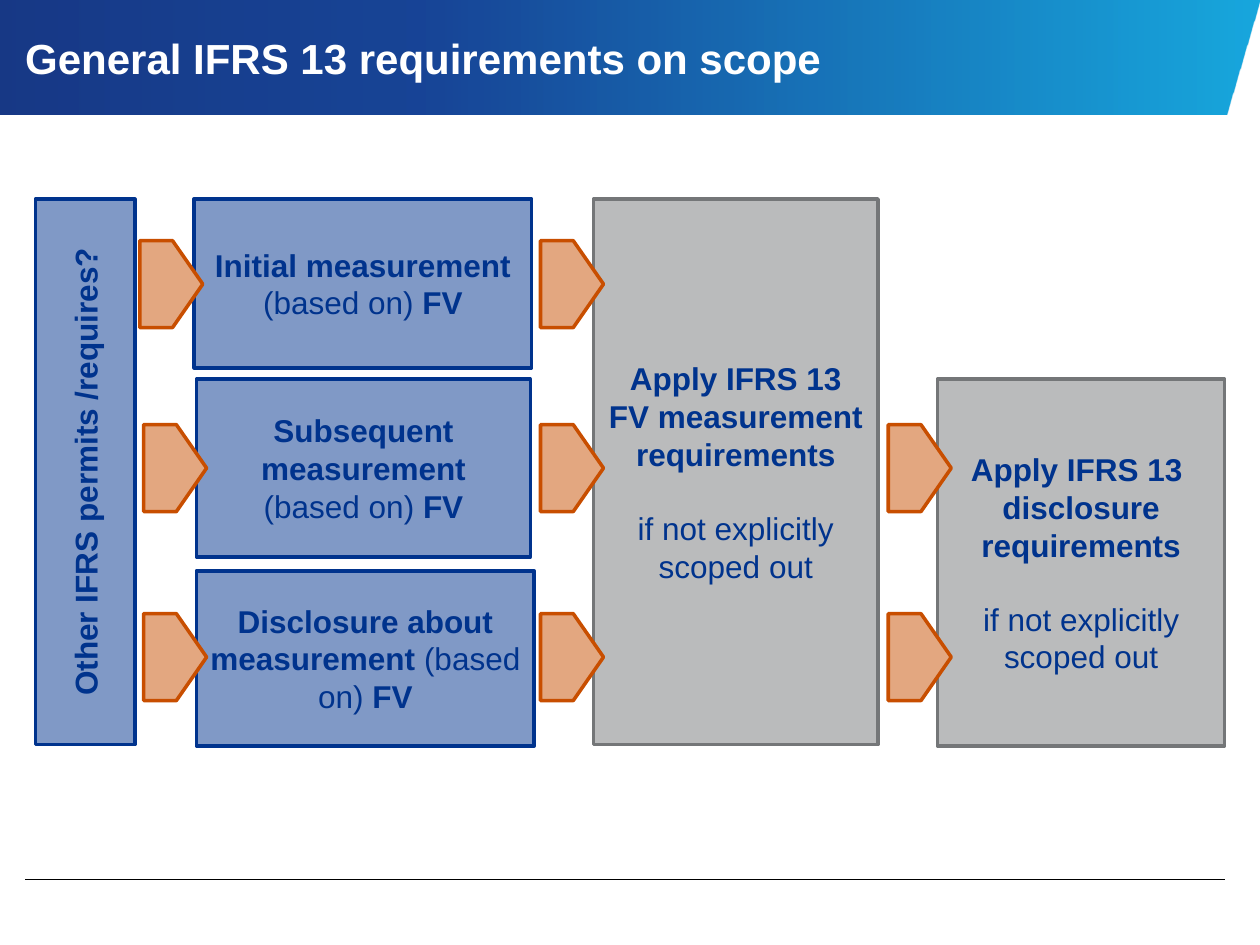
import copy
from dataclasses import dataclass

import pptx
import pptx.dml.color
import pptx.enum.shapes
import pptx.enum.text
import pptx.oxml
import pptx.oxml.ns
import pptx.util
from pptx.util import Inches

SHAPES = pptx.enum.shapes.MSO_SHAPE
ALIGN = pptx.enum.text.PP_ALIGN
MIDDLE = pptx.enum.text.MSO_ANCHOR.MIDDLE


@dataclass(frozen=True)
class Theme:
    font: str = "Arial"
    title_size: int = 24
    body_size: int = 18
    line_gap: float = 20.7
    outline: int = 2
    rule: float = 0.25
    title: str = "FFFFFF"
    text: str = "00338D"
    question: tuple = ("8099C6", "00338D")
    requirement: tuple = ("BABBBC", "747678")
    arrow: tuple = ("E3A780", "C84E00")
    rule_color: str = "000000"
    banner: tuple = ((0, "00257A"), (35, "00338D"), (100, "009FDA"))
    banner_opacity: int = 90


THEME = Theme()


def rgb(value):
    return pptx.dml.color.RGBColor.from_string(value)


def style_font(paragraph, size, color):
    paragraph.font.name = THEME.font
    paragraph.font.size = pptx.util.Pt(size)
    paragraph.font.color.rgb = rgb(color)


def add_banner(slide):
    builder = slide.shapes.build_freeform(0, 0)
    corners = [(0, 0.91), (9.73, 0.91), (10, 0)]
    builder.add_line_segments([(Inches(x), Inches(y)) for x, y in corners])
    banner = builder.convert_to_shape()
    banner.shadow.inherit = False
    banner.line.fill.background()
    banner.fill.gradient()
    banner.fill.gradient_angle = 0
    first = banner.fill.gradient_stops[0]
    stop_list = banner._element.spPr.find(".//" + pptx.oxml.ns.qn("a:gsLst"))
    stop_list.insert(1, copy.deepcopy(stop_list[0]))
    for stop, (position, color) in zip(banner.fill.gradient_stops, THEME.banner):
        stop.position = position / 100
        stop.color.rgb = rgb(color)
    for color_element in stop_list.iter(pptx.oxml.ns.qn("a:srgbClr")):
        alpha = color_element.makeelement(pptx.oxml.ns.qn("a:alpha"), {})
        alpha.set("val", str(THEME.banner_opacity * 1000))
        color_element.append(alpha)


def add_title(slide, text):
    title = slide.shapes.add_textbox(0.2 * Inches(1), 0, Inches(7.55), Inches(0.92))
    frame = title.text_frame
    frame.word_wrap = True
    frame.vertical_anchor = MIDDLE
    frame.margin_left = frame.margin_right = 0
    frame.margin_top = frame.margin_bottom = 0
    paragraph = frame.paragraphs[0]
    paragraph.text = text
    style_font(paragraph, THEME.title_size, THEME.title)
    paragraph.font.bold = True


def add_rule(slide):
    rule = slide.shapes.add_connector(
        pptx.enum.shapes.MSO_CONNECTOR.STRAIGHT,
        Inches(0.2), Inches(6.98), Inches(9.72), Inches(6.98))
    rule.line.color.rgb = rgb(THEME.rule_color)
    rule.line.width = pptx.util.Pt(THEME.rule)
    rule._element.spPr.append(pptx.oxml.parse_xml(
        f"<a:effectLst {pptx.oxml.ns.nsdecls('a')}/>"))


def add_block(slide, kind, bounds, colors):
    block = slide.shapes.add_shape(kind, *map(Inches, bounds))
    block.shadow.inherit = False
    fill, outline = colors
    block.fill.solid()
    block.fill.fore_color.rgb = rgb(fill)
    block.line.color.rgb = rgb(outline)
    block.line.width = pptx.util.Pt(THEME.outline)
    return block


def add_box(slide, bounds, colors, paragraphs):
    box = add_block(slide, SHAPES.RECTANGLE, bounds, colors)
    frame = box.text_frame
    frame.word_wrap = True
    frame.vertical_anchor = MIDDLE
    for index, (runs, space_before) in enumerate(paragraphs):
        paragraph = frame.add_paragraph() if index else frame.paragraphs[0]
        paragraph.alignment = ALIGN.CENTER
        if space_before:
            paragraph.space_before = pptx.util.Pt(space_before)
        style_font(paragraph, THEME.body_size, THEME.text)
        weights = {bold for _, bold in runs}
        if len(weights) == 1:
            paragraph.font.bold = weights.pop()
        for text, bold in runs:
            run = paragraph.add_run()
            run.text = text
            if len(runs) > 1:
                run.font.bold = bold
    return box


def add_arrow(slide, left, top):
    arrow = add_block(slide, SHAPES.PENTAGON, (left, top, 0.5, 0.69), THEME.arrow)
    arrow.adjustments[0] = 0.48


def main():
    deck = pptx.Presentation()
    deck.slide_width, deck.slide_height = Inches(10), Inches(7.5)
    slide = deck.slides.add_slide(deck.slide_layouts[6])

    add_banner(slide)
    add_rule(slide)
    add_title(slide, "General IFRS 13 requirements on scope")

    question = add_box(slide, (0.28, 1.58, 0.79, 4.33), THEME.question,
                       [([("Other IFRS permits /requires?", True)], 0)])
    question.text_frame._txBody.bodyPr.set("vert", "vert270")

    measurements = [
        ("Initial measurement ", (1.54, 1.58, 2.68, 1.34)),
        ("Subsequent measurement ", (1.56, 3.01, 2.65, 1.41)),
        ("Disclosure about measurement ", (1.56, 4.53, 2.68, 1.39)),
    ]
    for topic, bounds in measurements:
        runs = [(topic, True), ("(based on) ", False), ("FV", True)]
        add_box(slide, bounds, THEME.question, [(runs, 0)])

    exemption = ([("if not explicitly scoped out", False)], THEME.line_gap)
    add_box(slide, (4.71, 1.58, 2.26, 4.33), THEME.requirement,
            [([("Apply IFRS 13 FV measurement requirements", True)], 0), exemption])
    add_box(slide, (7.44, 3.01, 2.28, 2.91), THEME.requirement,
            [([("Apply IFRS 13 ", True)], 0),
             ([("disclosure requirements", True)], 0), exemption])

    arrow_rows = [(1.91, (1.11, 4.29)),
                  (3.37, (1.14, 4.29, 7.05)),
                  (4.87, (1.14, 4.29, 7.05))]
    for top, lefts in arrow_rows:
        for left in lefts:
            add_arrow(slide, left, top)

    deck.save("out.pptx")


if __name__ == "__main__":
    main()
